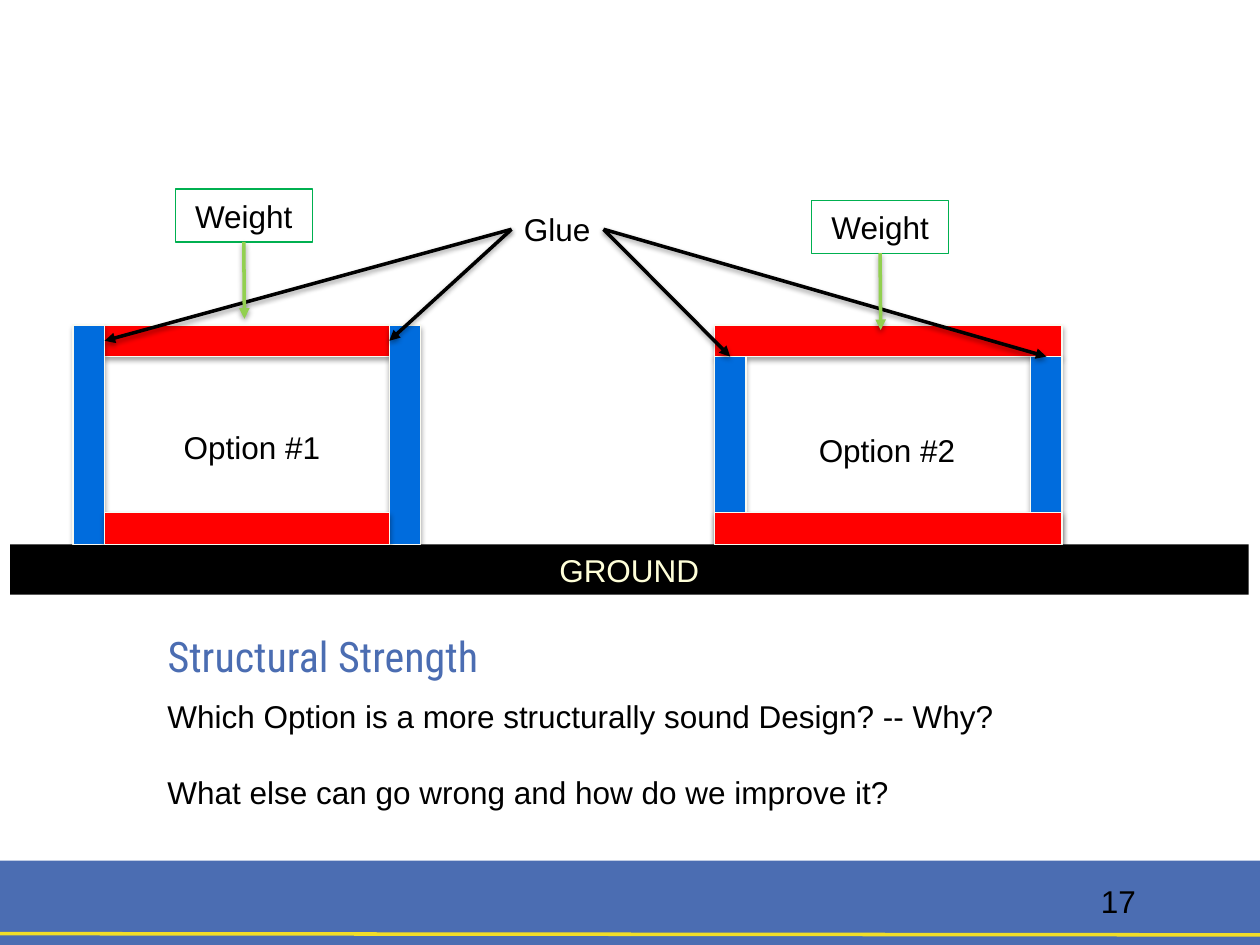
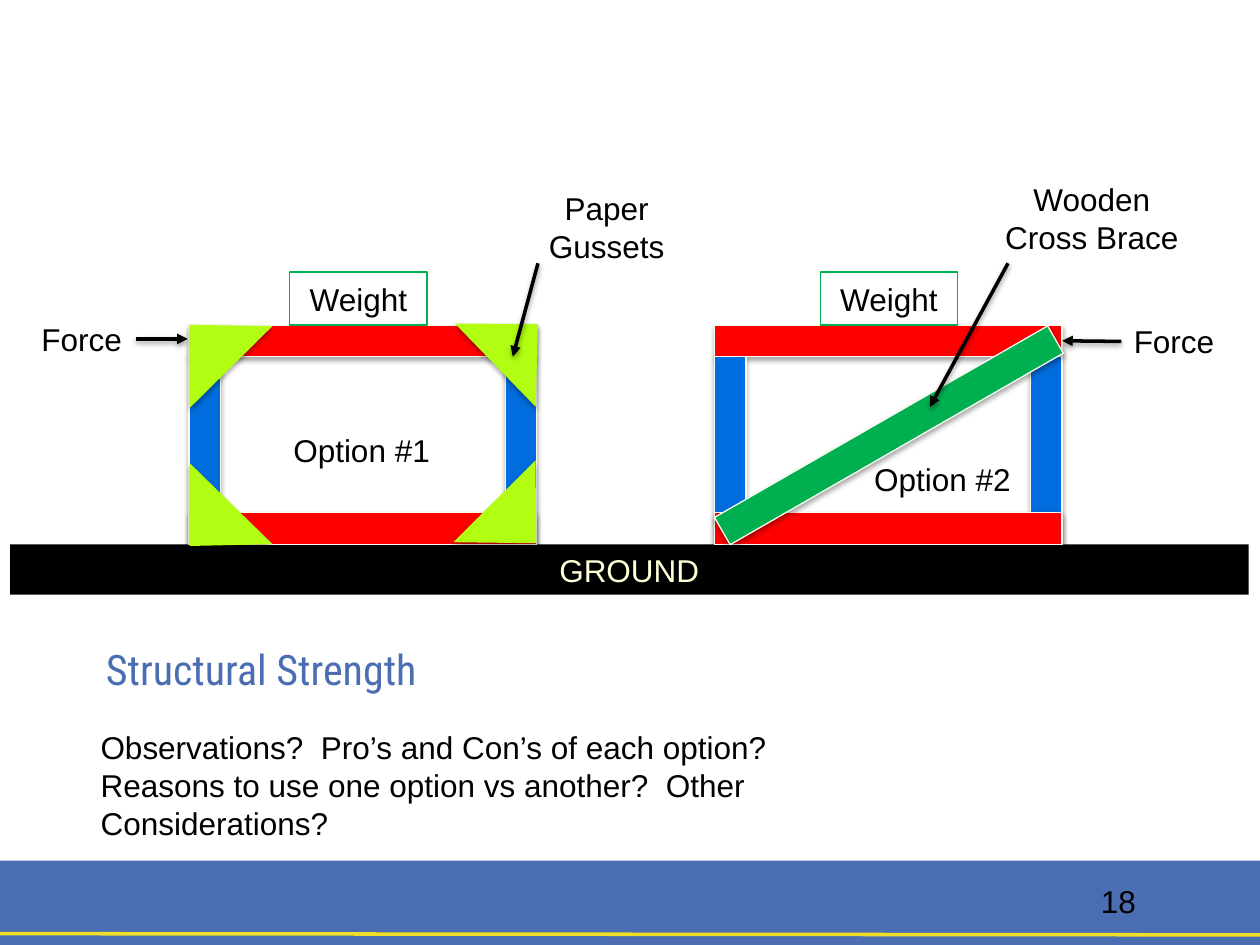
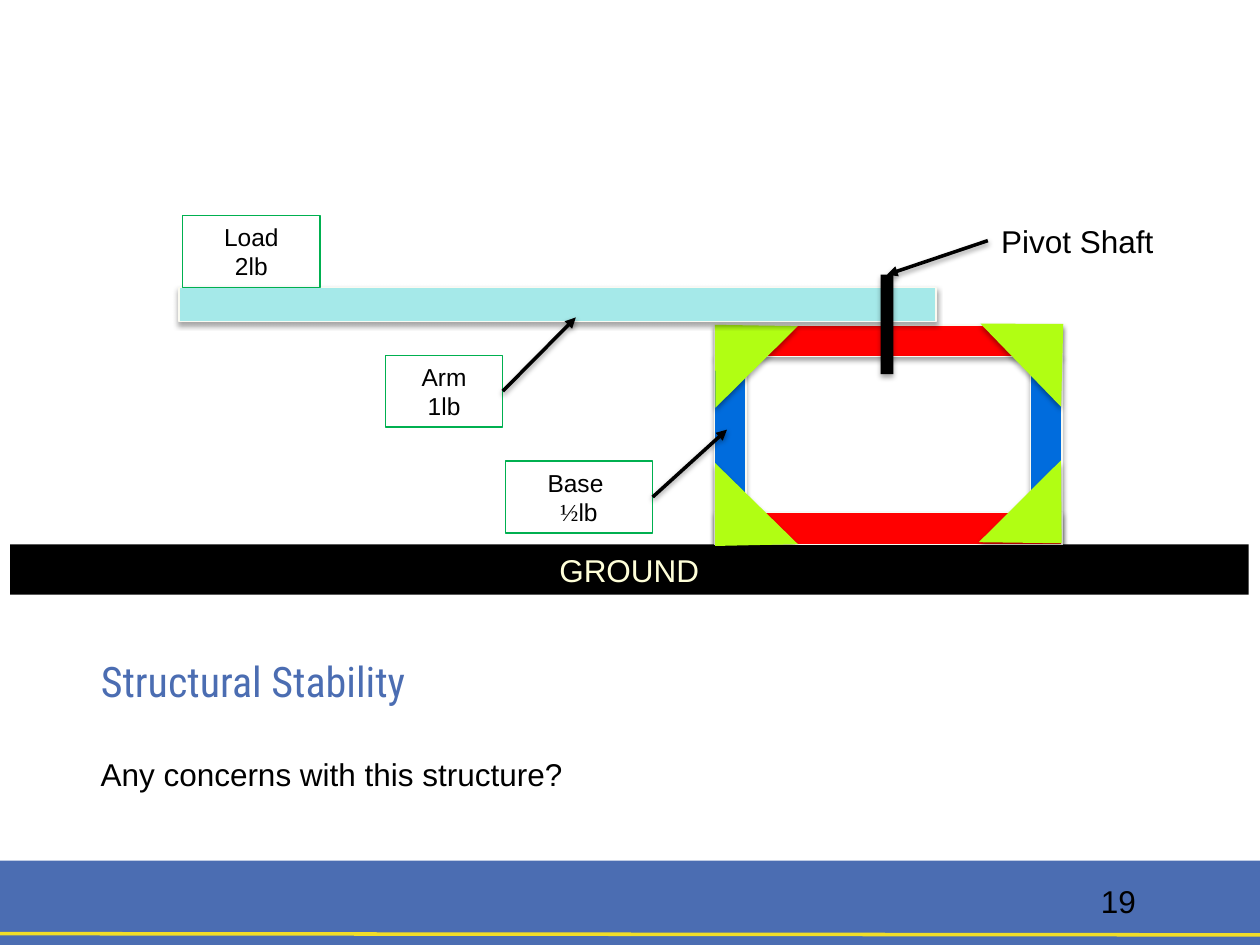
from lxml import etree
from pptx import Presentation
from pptx.dml.color import RGBColor
from pptx.enum import shapes, text
from pptx.oxml.ns import qn
from pptx.util import Inches, Pt

BLUE, GOLD, RED, POST = "4B6DB2", "F1DE27", "FF0000", "006CDD"
EDGE, GREEN, LIME, LEAF = "FAFAF1", "00B050", "B1FE13", "92D050"
BLACK, CREAM, AQUA = "000000", "FFFFD9", "A5E9E9"
BODY, HEAD, SERIF = "Arial", "Roboto Condensed", "Times New Roman"
KIND = shapes.MSO_SHAPE
LEFT, MID = text.PP_ALIGN.LEFT, text.PP_ALIGN.CENTER

THICK = 0.25
SPAN = 2.76
TOP = 2.58
BASE = 4.32
GUSSETS = [(2.14, 2.5, 45.9), (2.13, 3.91, 135.1),
           (-0.29, 2.51, 315.3), (-0.29, 3.93, 224.4)]


def color(code):
    return RGBColor.from_string(code)


def run(para, words, size=18, font=BODY, ink=BLACK):
    part = para.add_run()
    part.text = words
    part.font.size = Pt(size)
    part.font.name = font
    part.font.color.rgb = color(ink)
    return part


def write(shape, words, align=LEFT, gap=0, wrap=True, grow=True, **look):
    frame = shape.text_frame
    frame.word_wrap = wrap
    fit = text.MSO_AUTO_SIZE
    frame.auto_size = fit.SHAPE_TO_FIT_TEXT if grow else fit.NONE
    for i, line in enumerate(words.split("\n")):
        para = frame.add_paragraph() if i else frame.paragraphs[0]
        para.alignment = align
        para.space_before = Pt(gap if i else 0)
        run(para, line, **look)
    return shape


def shade(shape, alpha, dist):
    props = shape.element.spPr
    effects = props.find(qn("a:effectLst"))
    if effects is None:
        effects = etree.SubElement(props, qn("a:effectLst"))
    if alpha:
        cast = etree.SubElement(effects, qn("a:outerShdw"), blurRad=str(Pt(3.1)),
                                dist=str(Pt(dist)), dir="5400000", rotWithShape="0")
        tint = etree.SubElement(cast, qn("a:srgbClr"), val=BLACK)
        etree.SubElement(tint, qn("a:alpha"), val=str(alpha * 1000))


def block(slide, box, fill=None, edge=None, turn=0, cast=True, kind=KIND.RECTANGLE):
    shape = slide.shapes.add_shape(kind, *map(Inches, box))
    shape.rotation = turn
    if fill:
        shape.fill.solid()
        shape.fill.fore_color.rgb = color(fill)
    else:
        shape.fill.background()
    if edge:
        shape.line.color.rgb = color(edge)
        shape.line.width = Pt(0.75)
    else:
        shape.line.fill.background()
    shape.shadow.inherit = False
    if cast:
        shade(shape, 35, 1.8)
    return shape


def stroke(slide, start, end, ink=BLACK, head=True):
    ends = [(0, 0) if hasattr(p[0], "shape_id") else p for p in (start, end)]
    line = slide.shapes.add_connector(shapes.MSO_CONNECTOR.STRAIGHT,
                                      *[Inches(n) for p in ends for n in p])
    if ends[0] is not start:
        line.begin_connect(*start)
    if ends[1] is not end:
        line.end_connect(*end)
    line.line.color.rgb = color(ink)
    line.line.width = Pt(2)
    if head:
        etree.SubElement(line.line._get_or_add_ln(), qn("a:tailEnd"), type="triangle")
    shade(line, 38 if head else 0, 1.6)
    return line


def label(slide, box, words, **look):
    return write(slide.shapes.add_textbox(*map(Inches, box)), words, **look)


def tag(slide, box, words, size=18):
    shape = block(slide, box, edge=GREEN, cast=False)
    return write(shape, words, align=MID, size=size)


def weight(slide, x, y):
    return tag(slide, (x, y, 1.09, 0.42), "Weight")


def option(slide, x, y, num):
    label(slide, (x, y, 1.3, 0.4), f"Option #{num}", wrap=False)


def frame(slide, x, tall=False):
    inset, drop = (THICK, 0) if tall else (0, THICK)
    wide = SPAN - 2 * inset
    low = BASE - THICK
    beam = block(slide, (x + inset, TOP, wide, THICK), RED, EDGE)
    posts = [block(slide, (left, TOP + drop, THICK, BASE - TOP - drop), POST, EDGE)
             for left in (x, x + SPAN - THICK)]
    block(slide, (x + inset, low, wide, THICK), RED, EDGE)
    return beam, posts


def brace(slide, x):
    for shift, y, turn in GUSSETS:
        block(slide, (x + shift, y, 0.92, 0.47), LIME, turn=turn, kind=KIND.ISOSCELES_TRIANGLE)


def dress(slide):
    layout = slide.slide_layout
    for spare in list(layout.placeholders):
        if spare.placeholder_format.idx >= 10:
            layout.shapes.element.remove(spare.element)
    band = block(slide, (0, 6.83, 10, 0.67), BLUE, cast=False)
    rule = stroke(slide, (0, 7.41), (10, 7.42), GOLD, head=False)
    for part in (band, rule):
        layout.shapes.element.append(part.element)


def page(deck, num, title, box):
    slide = deck.slides.add_slide(deck.slide_layouts[5])
    if len(deck.slides) == 1:
        dress(slide)
    name = slide.shapes.title
    name.left, name.top, name.width, name.height = map(Inches, box)
    name.text_frame.vertical_anchor = text.MSO_ANCHOR.TOP
    write(name, title, grow=False, size=24, font=HEAD, ink=BLUE)
    ground = block(slide, (0.08, BASE, 9.83, 0.4), BLACK, cast=False)
    write(ground, "GROUND", align=MID, ink=CREAM)
    label(slide, (7.75, 6.95, 2.25, 0.4), str(num), align=MID, grow=False)
    return slide


def joints(deck):
    slide = page(deck, 17, "Structural Strength", (1.23, 4.95, 3.09, 0.72))
    beam, _ = frame(slide, 0.58, tall=True)
    _, posts = frame(slide, 5.67)
    glue = label(slide, (4.06, 1.62, 0.73, 0.4), "Glue", wrap=False)
    for side in (3, 1):
        stroke(slide, (glue, 1), (beam, side))
    for post in posts:
        stroke(slide, (glue, 3), (post, 0))
    option(slide, 1.36, 3.35, 1)
    option(slide, 6.4, 3.37, 2)
    for x, y in ((1.39, 1.5), (6.44, 1.59)):
        load = weight(slide, x, y)
        stroke(slide, (load, 2), (x + 0.55, y + 1.03), LEAF)
    label(slide, (1.23, 5.48, 6.82, 1.01),
          "Which Option is a more structurally sound Design? -- Why?\n"
          "What else can go wrong and how do we improve it?", gap=22, wrap=False)


def braces(deck):
    slide = page(deck, 18, "Structural Strength", (0.74, 5.06, 3.43, 0.58))
    right, _ = frame(slide, 5.67)
    frame(slide, 1.5)
    weight(slide, 6.51, 2.16)
    weight(slide, 2.3, 2.16)
    option(slide, 2.23, 3.37, 1)
    brace(slide, 1.5)
    stroke(slide, (4.27, 2.09), (4.07, 2.83))
    label(slide, (4.25, 1.45, 1.13, 0.71), "Paper\nGussets", align=MID, wrap=False)
    block(slide, (6.93, 1.93, THICK, 3.05), GREEN, EDGE, turn=60.1)
    option(slide, 6.84, 3.6, 2)
    stroke(slide, (8, 2.09), (7.38, 3.23))
    label(slide, (7.87, 1.38, 1.59, 0.71), "Wooden\nCross Brace", align=MID, wrap=False)
    push = label(slide, (0.23, 2.49, 0.85, 0.4), "Force", wrap=False)
    stroke(slide, (push, 3), (1.49, 2.69))
    pull = label(slide, (8.9, 2.51, 0.85, 0.4), "Force", wrap=False)
    stroke(slide, (pull, 1), (right, 3))
    label(slide, (0.7, 5.73, 7, 1.01),
          "Observations?  Pro’s and Con’s of each option?\n"
          "Reasons to use one option vs another?  Other Considerations?")


def pivot(deck):
    slide = page(deck, 19, "Structural Stability", (0.7, 5.15, 3.15, 0.75))
    label(slide, (0.7, 5.94, 3.9, 0.71), "Any concerns with this structure?", wrap=False)
    frame(slide, 5.67)
    brace(slide, 5.67)
    block(slide, (1.42, 2.28, 6.01, 0.27), AQUA, EDGE)
    shaft = block(slide, (6.99, 2.18, 0.1, 0.79), BLACK)
    tag(slide, (1.45, 1.71, 1.09, 0.57), "Load\n2lb", size=14)
    name = label(slide, (7.84, 1.71, 1.42, 0.4), "Pivot Shaft", align=MID, wrap=False)
    stroke(slide, (name, 1), (shaft, 0))
    base = tag(slide, (4.01, 3.66, 1.17, 0.57), "Base \n½", size=14)
    last = base.text_frame.paragraphs[1]
    last.runs[0].font.name = SERIF
    run(last, "lb", size=14)
    stroke(slide, (base, 3), (5.77, 3.41))
    arm = tag(slide, (3.06, 2.82, 0.93, 0.57), "Arm\n1lb", size=14)
    stroke(slide, (arm, 3), (4.57, 2.52))


def main():
    deck = Presentation()
    deck.slide_width, deck.slide_height = Inches(10), Inches(7.5)
    joints(deck)
    braces(deck)
    pivot(deck)
    deck.save("out.pptx")


if __name__ == "__main__":
    main()
